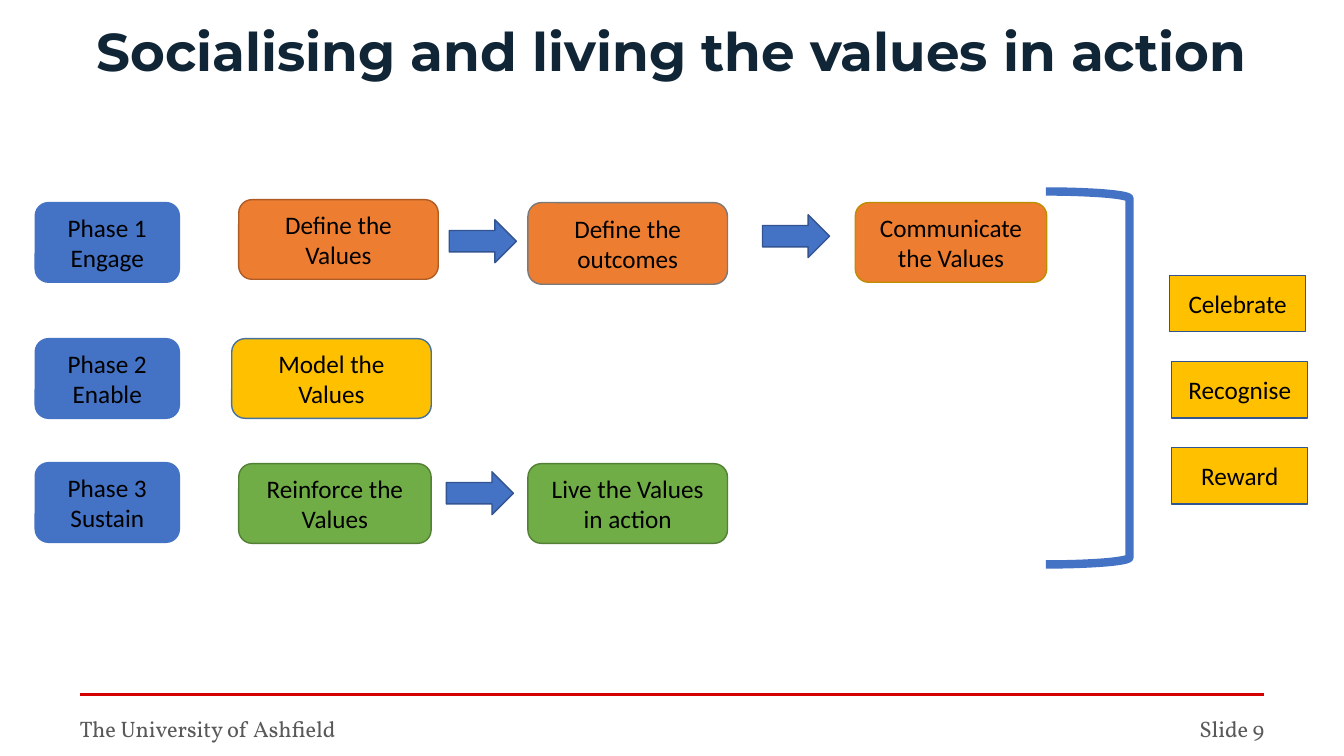
import pptx
import pptx.util
import pptx.dml.color
import pptx.enum.shapes
import pptx.enum.text

Pt = pptx.util.Pt
SHAPE = pptx.enum.shapes.MSO_SHAPE
ALIGN = pptx.enum.text.PP_ALIGN
ANCHOR = pptx.enum.text.MSO_ANCHOR

# Content
TITLE = "Socialising and living the values in action"
FOOTER = "The University of Ashfield"
SLIDE_NUMBER = "Slide 9"
COLOURS = {
    "title": "102535", "footer": "595959", "rule": "D40000", "text": "000000",
    "blue": "4472C4", "blue edge": "325491", "model edge": "43739E",
    "orange": "ED7D31", "orange edge": "AF5C24", "outcome edge": "7A7A7A",
    "gold": "FFC000", "gold edge": "BD8E00",
    "green": "70AD47", "green edge": "538035",
}
# Each phase: label, top, fill, steps as (text, left, top offset, width, height, edge)
PHASES = [
    ("Phase 1 Engage", 144.7, "orange", [
        ("Define the Values", 170.6, -2.1, 142.6, 56.9, "orange edge"),
        ("Define the outcomes", 377.3, 0, 142.6, 58.3, "outcome edge"),
        ("Communicate the Values", 611.3, 0, 136.8, 56.9, "gold edge")]),
    ("Phase 2 Enable", 241.9, "gold", [
        ("Model the Values", 165.6, 0, 142.6, 56.9, "model edge")]),
    ("Phase 3 Sustain", 330.5, "green", [
        ("Reinforce the Values", 170.6, 0.7, 137.5, 56.9, "green edge"),
        ("Live the Values in action", 377.3, 0.7, 142.6, 56.9, "green edge")]),
]
ARROWS = [(321.1, 157), (545, 153.4), (319, 337)]
RECOGNITION = [("Celebrate", 835.9), ("Recognise", 837.4), ("Reward", 837.4)]

# Layout
MARGIN, CONTENT_WIDTH = 56.9, 846.7
PHASE_LEFT, PHASE_WIDTH, PHASE_HEIGHT = 25.2, 103, 56.9
ARROW_WIDTH, ARROW_HEIGHT = 47.9, 30.6
RECOGNITION_TOP, RECOGNITION_PITCH = 196.6, 61.6
RECOGNITION_WIDTH, RECOGNITION_HEIGHT = 97.2, 40.3
FOOTER_TOP, FOOTER_HEIGHT = 510.5, 14.4


def rgb(name):
    return pptx.dml.color.RGBColor.from_string(COLOURS[name])


def write(holder, text, font="Calibri", size=18, colour="text", bold=False,
          align=ALIGN.CENTER, anchor=ANCHOR.MIDDLE, inset=None, spacing=None):
    frame = holder.text_frame
    frame.word_wrap = True
    frame.auto_size = pptx.enum.text.MSO_AUTO_SIZE.NONE
    frame.vertical_anchor = anchor
    if inset is not None:
        frame.margin_left = frame.margin_right = Pt(inset)
        frame.margin_top = frame.margin_bottom = Pt(inset)
    paragraph = frame.paragraphs[0]
    paragraph.alignment = align
    if spacing:
        paragraph.line_spacing = spacing
    run = paragraph.add_run()
    run.text = text
    run.font.name, run.font.size, run.font.bold = font, Pt(size), bold
    run.font.color.rgb = rgb(colour)


def add_block(slide, kind, left, top, width, height, fill, edge, weight=1, text=None):
    block = slide.shapes.add_shape(kind, Pt(left), Pt(top), Pt(width), Pt(height))
    block.shadow.inherit = False
    if fill:
        block.fill.solid()
        block.fill.fore_color.rgb = rgb(fill)
    else:
        block.fill.background()
    block.line.color.rgb = rgb(edge)
    block.line.width = Pt(weight)
    if text:
        write(block, text)


def add_frame(slide):
    # Title
    title = slide.shapes.title
    title.left, title.top = Pt(MARGIN), Pt(18)
    title.width, title.height = Pt(CONTENT_WIDTH), Pt(85)
    write(title, TITLE, font="Montserrat", size=38, colour="title", bold=True,
          anchor=ANCHOR.TOP, inset=0, spacing=0.9)

    # Footer rule and texts
    right = MARGIN + CONTENT_WIDTH
    rule = slide.shapes.add_connector(pptx.enum.shapes.MSO_CONNECTOR.STRAIGHT,
                                      Pt(MARGIN), Pt(496.1), Pt(right), Pt(496.1))
    rule.line.color.rgb = rgb("rule")
    rule.line.width = Pt(2.5)
    rule._element.spPr.append(pptx.oxml.xmlchemy.OxmlElement("a:effectLst"))
    for text, left, width, align in [
            (FOOTER, MARGIN, 378, ALIGN.LEFT),
            (SLIDE_NUMBER, right - 189.4, 189.4, ALIGN.RIGHT)]:
        footer = slide.shapes.add_textbox(Pt(left), Pt(FOOTER_TOP), Pt(width), Pt(FOOTER_HEIGHT))
        write(footer, text, font="Vollkorn", size=16, colour="footer",
              align=align, anchor=ANCHOR.TOP, inset=0)


def main():
    deck = pptx.Presentation()
    deck.slide_width, deck.slide_height = Pt(960.5), Pt(540)
    slide = deck.slides.add_slide(deck.slide_layouts[5])
    add_frame(slide)

    # Phases and their steps
    for label, top, fill, steps in PHASES:
        add_block(slide, SHAPE.ROUNDED_RECTANGLE, PHASE_LEFT, top,
                  PHASE_WIDTH, PHASE_HEIGHT, "blue", "blue", text=label)
        for text, left, offset, width, height, edge in steps:
            add_block(slide, SHAPE.ROUNDED_RECTANGLE, left, top + offset,
                      width, height, fill, edge, text=text)

    # Arrows between steps
    for left, top in ARROWS:
        add_block(slide, SHAPE.RIGHT_ARROW, left, top, ARROW_WIDTH, ARROW_HEIGHT,
                  "blue", "blue edge")

    # Bracket leading to recognition
    add_block(slide, SHAPE.RIGHT_BRACKET, 747.4, 136.8, 59.8, 266.4, None, "blue", weight=6)
    for row, (text, left) in enumerate(RECOGNITION):
        add_block(slide, SHAPE.RECTANGLE, left, RECOGNITION_TOP + row * RECOGNITION_PITCH,
                  RECOGNITION_WIDTH, RECOGNITION_HEIGHT, "gold", "blue edge", text=text)

    deck.save("out.pptx")


if __name__ == "__main__":
    main()
